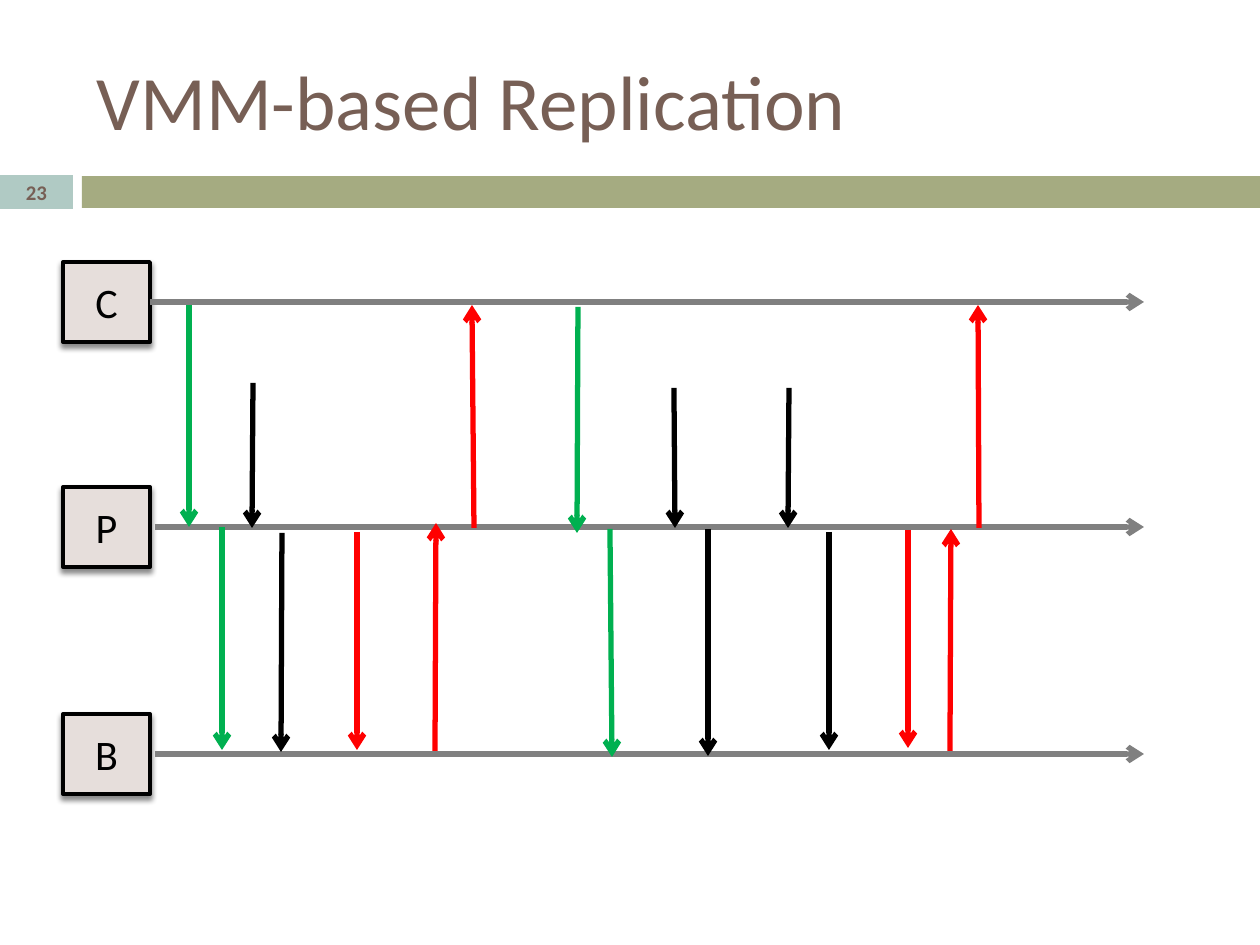
"""Builds the VMM-based Replication timing diagram slide."""
from lxml.etree import SubElement
from pptx import Presentation
from pptx.dml.color import RGBColor
from pptx.enum.shapes import MSO_CONNECTOR as Connector, MSO_SHAPE as Shape
from pptx.enum.text import MSO_ANCHOR as Anchor, MSO_AUTO_SIZE as AutoSize, PP_ALIGN as Align
from pptx.oxml.ns import qn
from pptx.util import Emu, Pt

TITLE = "VMM-based Replication"
PAGE_NUMBER = "23"
LANES = [("C", 302, 150), ("P", 527, 155), ("B", 754, 155)]
LANE_END = 1144
BOX_LEFT, BOX_WIDTH, BOX_HEIGHT = 63, 87, 80
BROWN, OLIVE, TEAL, BEIGE = "775F55", "A5AB81", "B0CAC4", "E6DEDB"
BLACK, GRAY, GREEN, RED = "000000", "808080", "00B050", "FF0000"
MESSAGES = {
    GREEN: [
        (189, 305, 189, 527),
        (578, 307, 577, 533),
        (222, 527, 222, 750),
        (610, 529, 612, 757),
    ],
    BLACK: [
        (253, 383, 252, 528),
        (829, 532, 829, 750),
        (708, 529, 708, 756),
        (282, 533, 281, 752),
        (674, 388, 675, 528),
        (789, 388, 788, 528),
    ],
    RED: [
        (474, 528, 472, 305),
        (979, 528, 978, 305),
        (357, 532, 357, 750),
        (435, 751, 436, 523),
        (950, 751, 951, 529),
        (908, 530, 908, 748),
    ],
}


def px(*lengths):
    return [Emu(round(length * 914400 / 126)) for length in lengths]


def color(value):
    return RGBColor.from_string(value)


def write(shape, text, size, fill, align=Align.CENTER, bold=False):
    frame = shape.text_frame
    frame.word_wrap = True
    frame.auto_size = AutoSize.NONE
    frame.vertical_anchor = Anchor.MIDDLE
    para = frame.paragraphs[0]
    para.alignment = align
    span = para.add_run()
    span.text = text
    for name, value in {"name": "Calibri", "size": Pt(size), "bold": bold}.items():
        setattr(span.font, name, value)
    span.font.color.rgb = color(fill)


def add_block(page, kind, place, fill):
    block = page.shapes.add_shape(kind, *px(*place))
    block.shadow.inherit = False
    block.fill.solid()
    block.fill.fore_color.rgb = color(fill)
    block.line.fill.background()
    return block


def add_box(page, label, center):
    place = (BOX_LEFT, center - BOX_HEIGHT // 2, BOX_WIDTH, BOX_HEIGHT)
    box = add_block(page, Shape.FLOWCHART_PROCESS, place, BEIGE)
    box.line.color.rgb = color(BLACK)
    box.line.width = Pt(2.25)
    effects = box._element.spPr.find(qn("a:effectLst"))
    shadow = SubElement(effects, qn("a:outerShdw"), blurRad=str(Pt(3)),
                        dist=str(Pt(2.4)), dir="5400000", rotWithShape="0")
    tint = SubElement(shadow, qn("a:srgbClr"), val=BLACK)
    SubElement(tint, qn("a:alpha"), val="45000")
    write(box, label, 24, BLACK)
    return box


def add_arrow(page, ends, stroke):
    arrow = page.shapes.add_connector(Connector.STRAIGHT, *px(*ends))
    arrow.line.color.rgb = color(stroke)
    arrow.line.width = Pt(3)
    SubElement(arrow.line._get_or_add_ln(), qn("a:tailEnd"), type="arrow")
    SubElement(arrow._element.spPr, qn("a:effectLst"))
    return arrow


def main():
    deck = Presentation()
    deck.slide_width, deck.slide_height = px(1260, 945)
    page = deck.slides.add_slide(deck.slide_layouts[5])

    title = page.shapes.title
    title.left, title.top, title.width, title.height = px(84, 32, 1124, 136)
    write(title, TITLE, 44, BROWN, Align.LEFT)

    add_block(page, Shape.RECTANGLE, (82, 176, 1178, 32), OLIVE)
    number = add_block(page, Shape.RECTANGLE, (0, 175, 73, 34), TEAL)
    write(number, PAGE_NUMBER, 11.9, BROWN, bold=True)

    for label, center, start in LANES:
        box = add_box(page, label, center)
        lane = add_arrow(page, (start, center, LANE_END, center), GRAY)
        if start == BOX_LEFT + BOX_WIDTH:
            lane.begin_connect(box, 3)

    for stroke, arrows in MESSAGES.items():
        for ends in arrows:
            add_arrow(page, ends, stroke)

    deck.save("out.pptx")


if __name__ == "__main__":
    main()
